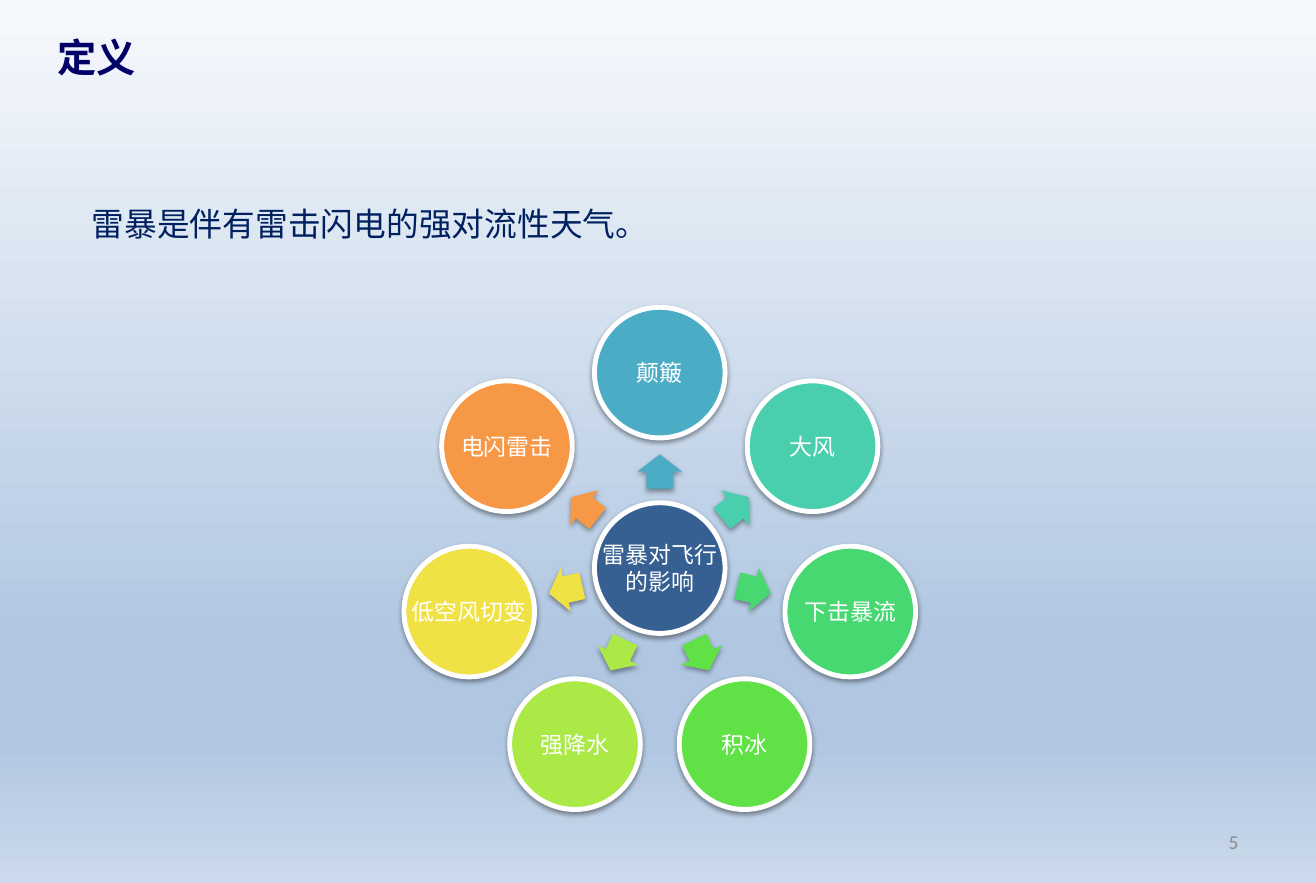
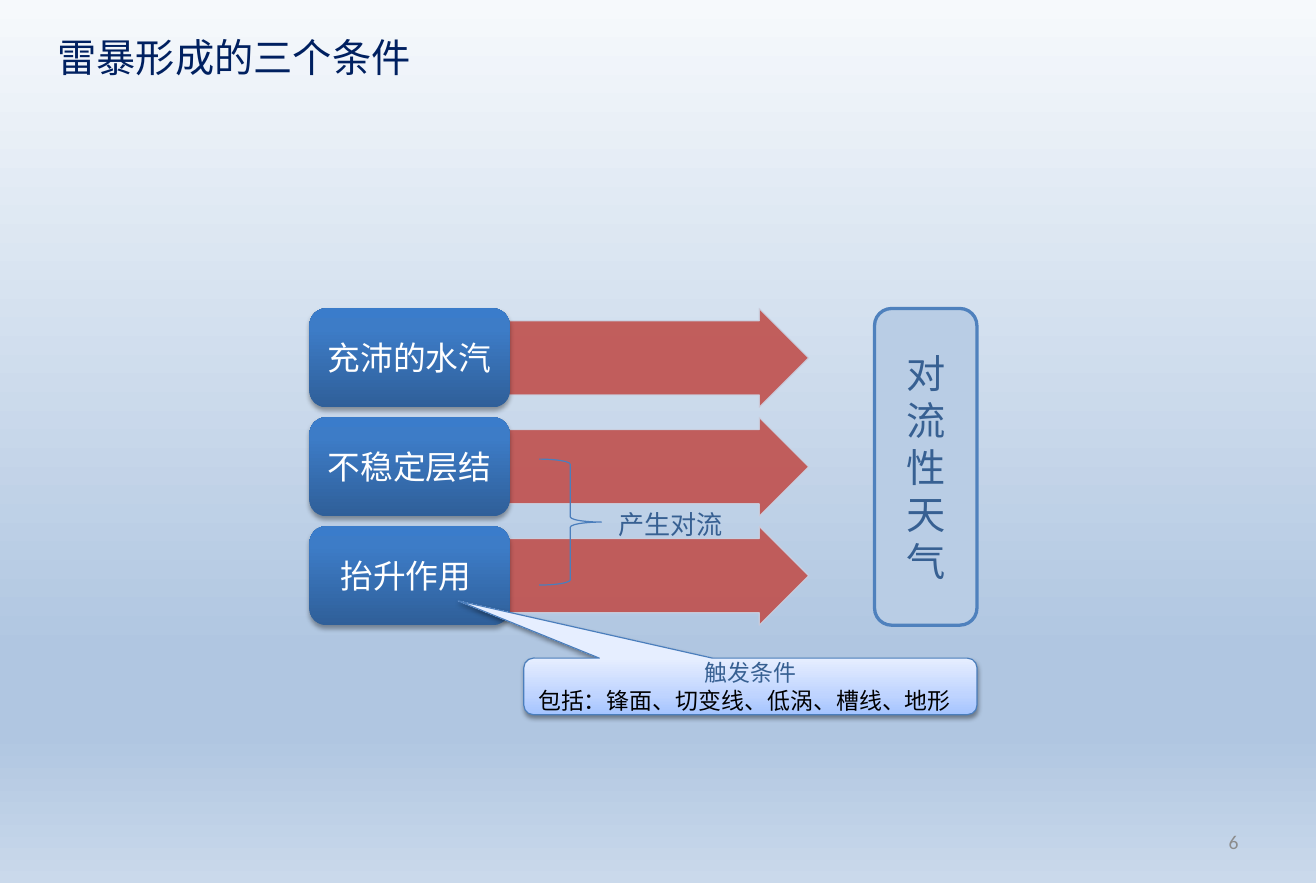
from math import cos, radians, sin

from lxml import etree
from pptx import Presentation
from pptx.dml.color import RGBColor
from pptx.enum.shapes import MSO_SHAPE
from pptx.enum.text import MSO_ANCHOR, PP_ALIGN
from pptx.oxml.ns import qn
from pptx.util import Inches, Pt

ARROW = MSO_SHAPE.RIGHT_ARROW
ELLIPSE = MSO_SHAPE.OVAL
ROUNDED = MSO_SHAPE.ROUNDED_RECTANGLE
CALLOUT = MSO_SHAPE.ROUNDED_RECTANGULAR_CALLOUT
BRACE = MSO_SHAPE.RIGHT_BRACE
TOP, MIDDLE = MSO_ANCHOR.TOP, MSO_ANCHOR.MIDDLE
LEFT, CENTER, RIGHT = PP_ALIGN.LEFT, PP_ALIGN.CENTER, PP_ALIGN.RIGHT

WHITE = RGBColor(0xFF, 0xFF, 0xFF)
BLACK = RGBColor(0x00, 0x00, 0x00)
GREY = RGBColor(0x8C, 0x8C, 0x8C)
NAVY = RGBColor(0x00, 0x20, 0x60)
DEEP_BLUE = RGBColor(0x00, 0x00, 0x66)
STEEL = RGBColor(0x37, 0x60, 0x92)
PALE_BLUE = RGBColor(0xB9, 0xCD, 0xE5)
BORDER_BLUE = RGBColor(0x4F, 0x81, 0xBD)
LINE_BLUE = RGBColor(0x4B, 0x7E, 0xBC)
RED = RGBColor(0xC0, 0x50, 0x4D)
ARROW_EDGE = RGBColor(0xCB, 0xD3, 0xE3)

SKY = [(0, RGBColor(0xF6, 0xF9, 0xFC)), (74, RGBColor(0xB0, 0xC6, 0xE1)),
       (83, RGBColor(0xB0, 0xC6, 0xE1)), (100, RGBColor(0xCA, 0xD9, 0xEB))]
BLUE_FADE = [(0, RGBColor(0x2F, 0x5F, 0x99)), (80, RGBColor(0x3D, 0x7C, 0xC7)),
             (100, RGBColor(0x3A, 0x7C, 0xCB))]
PALE_FADE = [(0, RGBColor(0xA4, 0xC4, 0xFF)), (35, RGBColor(0xBF, 0xD4, 0xFF)),
             (100, RGBColor(0xE6, 0xEE, 0xFF))]

CALIBRI, TIMES, NOTO = "Calibri", "Times New Roman", "Noto Sans CJK SC"
TITLE_BOLD = dict(name=NOTO, size=Pt(24), color=DEEP_BLUE, bold=True)
TITLE = dict(name=CALIBRI, size=Pt(24), color=NAVY)
NUMBER = dict(name=CALIBRI, size=Pt(12), color=GREY)
BODY = dict(name=CALIBRI, size=Pt(20), color=NAVY)
CIRCLE_TEXT = dict(name=CALIBRI, size=Pt(14), color=WHITE)
CONDITION_TEXT = dict(name=TIMES, size=Pt(20), color=WHITE)
RESULT_TEXT = dict(name=TIMES, size=Pt(24), color=STEEL)
BRACE_TEXT = dict(name=TIMES, size=Pt(16), color=STEEL)
TRIGGER_HEAD = dict(name=TIMES, size=Pt(14), color=STEEL)
TRIGGER_BODY = dict(name=CALIBRI, size=Pt(14), color=BLACK)

DEFINITION = "雷暴是伴有雷击闪电的强对流性天气。"
HUB = "雷暴对飞行\v的影响"
EFFECTS = [
    ("颠簸", RGBColor(0x4B, 0xAC, 0xC6)),
    ("大风", RGBColor(0x49, 0xCF, 0xAE)),
    ("下击暴流", RGBColor(0x47, 0xD8, 0x72)),
    ("积冰", RGBColor(0x60, 0xE1, 0x46)),
    ("强降水", RGBColor(0xAB, 0xE9, 0x46)),
    ("低空风切变", RGBColor(0xF0, 0xE2, 0x45)),
    ("电闪雷击", RGBColor(0xF7, 0x98, 0x46)),
]
CONDITIONS = ["充沛的水汽", "不稳定层结", "抬升作用 "]
RESULT = ["对流", "性天气"]
TRIGGER = [("触发条件", TRIGGER_HEAD, CENTER),
           ("包括：锋面、切变线、低涡、槽线、地形", TRIGGER_BODY, LEFT)]

HUB_X, HUB_Y = 5.605, 4.825
CIRCLE_SIZE, RING_RADIUS, ARROW_RADIUS = 1.11, 1.66, 0.82
ROW_TOP, ROW_HEIGHT, ROW_PITCH = 2.62, 0.84, 0.925


def set_stops(element, stops):
    stop_list = element.find(".//" + qn("a:gsLst"))
    for old in list(stop_list):
        stop_list.remove(old)
    for position, color in stops:
        stop = etree.SubElement(stop_list, qn("a:gs"), pos=str(position * 1000))
        etree.SubElement(stop, qn("a:srgbClr"), val=str(color))


def fill_gradient(fill, element, stops, angle):
    fill.gradient()
    fill.gradient_angle = angle
    set_stops(element, stops)


def add_shadow(shape, opacity, distance):
    effects = shape._element.spPr.find(qn("a:effectLst"))
    shadow = etree.SubElement(effects, qn("a:outerShdw"), blurRad=str(Pt(3.1)),
                              dist=str(Pt(distance)), dir="5400000", rotWithShape="0")
    color = etree.SubElement(shadow, qn("a:srgbClr"), val=str(BLACK))
    etree.SubElement(color, qn("a:alpha"), val=str(opacity * 1000))


def fade_colors(shape, opacity):
    for color in shape._element.spPr.iter(qn("a:srgbClr")):
        etree.SubElement(color, qn("a:alpha"), val=str(opacity * 1000))


def write(shape, paragraphs, anchor=MIDDLE, insets=(0.1, 0.05), wrap=True):
    frame = shape.text_frame
    frame.word_wrap = wrap
    frame.vertical_anchor = anchor
    frame.margin_left = frame.margin_right = Inches(insets[0])
    frame.margin_top = frame.margin_bottom = Inches(insets[1])
    for index, (text, style, align) in enumerate(paragraphs):
        para = frame.paragraphs[0] if index == 0 else frame.add_paragraph()
        para.text = text
        para.alignment = align
        for span in para.runs:
            for key, value in style.items():
                if key == "color":
                    span.font.color.rgb = value
                else:
                    setattr(span.font, key, value)


def add_text(page, place, text, style, align=LEFT, **options):
    box = page.shapes.add_textbox(*map(Inches, place))
    write(box, [(text, style, align)], **options)


def add_figure(page, kind, place, fill=None, line=None, adjustments=()):
    shape = page.shapes.add_shape(kind, *map(Inches, place))
    shape.shadow.inherit = False
    for index, value in enumerate(adjustments):
        shape.adjustments[index] = value
    if isinstance(fill, list):
        fill_gradient(shape.fill, shape._element, fill, 90)
    elif fill is None:
        shape.fill.background()
    else:
        shape.fill.solid()
        shape.fill.fore_color.rgb = fill
    if line is None:
        shape.line.fill.background()
    else:
        shape.line.color.rgb = line[0]
        shape.line.width = Pt(line[1])
    return shape


def centred(x, y, width, height):
    return x - width / 2, y - height / 2, width, height


def add_page(deck, number, title, style):
    page = deck.slides.add_slide(deck.slide_layouts[6])
    add_text(page, (8.01, 6.95, 2.61, 0.4), number, NUMBER, RIGHT)
    add_text(page, (0.39, 0.23, 4.14, 0.5), title, style, anchor=TOP)
    return page


def add_circle(page, x, y, text, color):
    circle = add_figure(page, ELLIPSE, centred(x, y, CIRCLE_SIZE, CIRCLE_SIZE),
                        color, (WHITE, 3))
    add_shadow(circle, 38, 1.6)
    write(circle, [(text, CIRCLE_TEXT, CENTER)], insets=(0.02, 0.02), wrap=False)


def build_definition(deck):
    page = add_page(deck, "5", "定义", TITLE_BOLD)
    add_text(page, (0.68, 1.65, 10, 0.5), DEFINITION, BODY)
    add_circle(page, HUB_X, HUB_Y, HUB, STEEL)
    for index, (text, color) in enumerate(EFFECTS):
        angle = index * 360 / len(EFFECTS) - 90
        across, down = cos(radians(angle)), sin(radians(angle))
        arrow = add_figure(page, ARROW,
                           centred(HUB_X + ARROW_RADIUS * across,
                                   HUB_Y + ARROW_RADIUS * down, 0.29, 0.38),
                           color, adjustments=(0.6, 0.5))
        arrow.rotation = angle % 360
        add_shadow(arrow, 38, 1.6)
        add_circle(page, HUB_X + RING_RADIUS * across, HUB_Y + RING_RADIUS * down,
                   text, color)


def build_conditions(deck):
    page = add_page(deck, "6", "雷暴形成的三个条件", TITLE)
    for index, text in enumerate(CONDITIONS):
        top = ROW_TOP + index * ROW_PITCH
        arrow = add_figure(page, ARROW, (4.32, top, 2.55, ROW_HEIGHT), RED,
                           (ARROW_EDGE, 0.75), (0.75, 0.5))
        fade_colors(arrow, 90)
        condition = add_figure(page, ROUNDED, (2.63, top, 1.7, ROW_HEIGHT), BLUE_FADE)
        add_shadow(condition, 35, 1.8)
        write(condition, [(text, CONDITION_TEXT, CENTER)], insets=(0.08, 0.04))
    result = add_figure(page, ROUNDED, (7.43, ROW_TOP, 0.87, 2.69), PALE_BLUE,
                        (BORDER_BLUE, 2))
    write(result, [(text, RESULT_TEXT, CENTER) for text in RESULT])
    trigger = add_figure(page, CALLOUT, (4.45, 5.59, 3.85, 0.48), PALE_FADE,
                         (LINE_BLUE, 0.75), (-0.645, -1.515, 0.167))
    add_shadow(trigger, 38, 1.6)
    write(trigger, TRIGGER)
    add_figure(page, BRACE, (4.58, 3.9, 0.53, 1.07), line=(LINE_BLUE, 0.75))
    add_text(page, (5.15, 4.27, 1.1, 0.37), "产生对流", BRACE_TEXT, CENTER,
             anchor=TOP, wrap=False)


def main():
    deck = Presentation()
    deck.slide_width, deck.slide_height = Inches(11.18), Inches(7.5)
    master = deck.slide_master
    fill_gradient(master.background.fill, master._element, SKY, 270)
    build_definition(deck)
    build_conditions(deck)
    deck.save("out.pptx")


if __name__ == "__main__":
    main()
